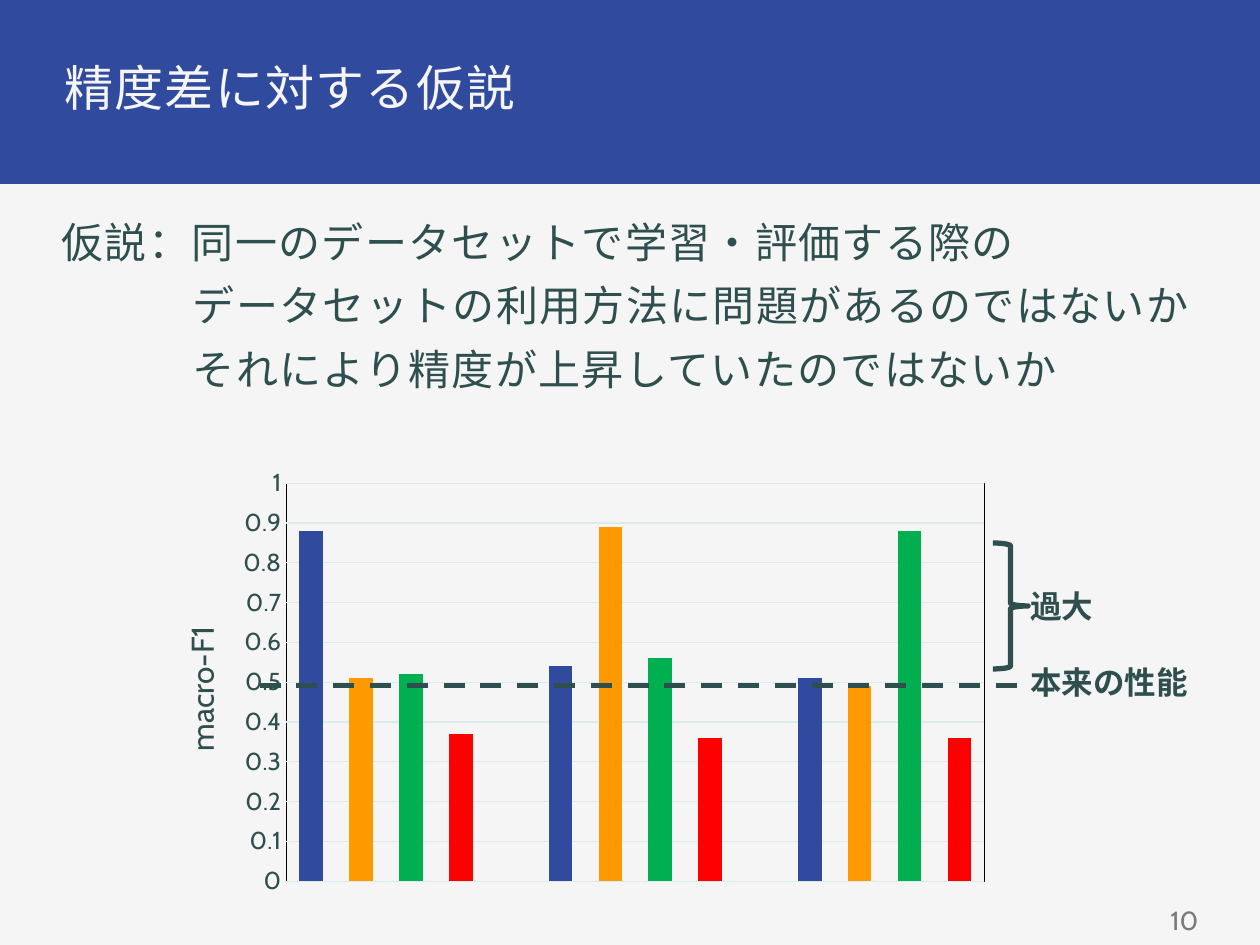
from lxml.etree import SubElement
from pptx import Presentation
from pptx.chart.data import CategoryChartData
from pptx.dml.color import RGBColor
from pptx.enum.chart import XL_CHART_TYPE, XL_TICK_MARK
from pptx.enum.dml import MSO_LINE
from pptx.enum.shapes import MSO_CONNECTOR, MSO_SHAPE
from pptx.enum.text import MSO_ANCHOR, PP_ALIGN
from pptx.oxml import parse_xml
from pptx.oxml.ns import nsdecls, qn
from pptx.util import Emu, Inches, Pt

COLORS = {
    "paper": "F5F5F5", "ink": "2F4F4F", "grid": "DBEAEA", "frame": "000000", "page": "7A7A7A",
    "blue": "304A9E", "orange": "FF9900", "green": "00B050", "red": "FF0000",
}
COLUMNS, ROWS = 100, 75
GROUP_COLORS = ["blue", "orange", "green", "red"]
SCORE_GROUPS = [
    [0.88, 0.51, 0.52, 0.37],
    [0.54, 0.89, 0.56, 0.36],
    [0.51, 0.49, 0.88, 0.36],
]


def rgb(name):
    return RGBColor.from_string(COLORS[name])


class SlideWriter:
    """Draws on one slide; lengths are columns and rows of the grid."""

    font_name = "Cabin"

    def __init__(self, presentation):
        self.column = presentation.slide_width / COLUMNS
        self.row = presentation.slide_height / ROWS
        self.slide = presentation.slides.add_slide(presentation.slide_layouts[6])
        background = self.slide.background.fill
        background.solid()
        background.fore_color.rgb = rgb("paper")

    def area(self, left, top, width, height):
        return [Emu(round(length * unit)) for length, unit in
                zip((left, top, width, height), (self.column, self.row) * 2)]

    def style_font(self, font, size, color, bold=False):
        font.name, font.size, font.bold = self.font_name, Pt(size), bold
        font.color.rgb = rgb(color)

    def text(self, place, lines, size, color="ink", bold=False, align=PP_ALIGN.LEFT,
             anchor=MSO_ANCHOR.TOP, insets=(0.06, 0.06, 0, 0.06), line_spacing=1,
             space_before=0, tracking=0, hanging=0):
        """Writes one paragraph per line; hanging indents all lines but the first."""
        frame = self.slide.shapes.add_textbox(*self.area(*place)).text_frame
        frame.word_wrap = True
        frame.vertical_anchor = anchor
        (frame.margin_left, frame.margin_top,
         frame.margin_right, frame.margin_bottom) = map(Inches, insets)
        for number, line in enumerate(lines):
            paragraph = frame.add_paragraph() if number else frame.paragraphs[0]
            paragraph.text = line
            paragraph.alignment = align
            paragraph.line_spacing = line_spacing
            paragraph.space_before = Pt(space_before)
            self.style_font(paragraph.font, size, color, bold)
            properties = paragraph.font._element
            properties.set("spc", str(round(tracking * 100)))
            SubElement(properties, qn("a:ea"), typeface=self.font_name)
            if number and hanging:
                paragraph._p.get_or_add_pPr().set("marL", str(round(hanging * self.column)))

    def band(self, place, color):
        band = self.slide.shapes.add_shape(MSO_SHAPE.RECTANGLE, *self.area(*place))
        band.shadow.inherit = False
        band.fill.solid()
        band.fill.fore_color.rgb = rgb(color)
        band.line.fill.background()

    def brace(self, place):
        brace = self.slide.shapes.add_shape(MSO_SHAPE.RIGHT_BRACE, *self.area(*place))
        brace.shadow.inherit = False
        brace.fill.background()
        brace.line.color.rgb = rgb("ink")
        brace.line.width = Pt(3)

    def dashed_level(self, left, right, height):
        level = self.slide.shapes.add_connector(
            MSO_CONNECTOR.STRAIGHT, *self.area(left, height, right, height))
        level.line.color.rgb = rgb("ink")
        level.line.width = Pt(3)
        level.line.dash_style = MSO_LINE.DASH
        SubElement(level._element.spPr, qn("a:effectLst"))

    @staticmethod
    def chart_layout(inner=False, **shares):
        """Manual layout in shares of the chart's size."""
        target = '<c:layoutTarget val="inner"/>' if inner else ""
        modes = '<c:xMode val="edge"/><c:yMode val="edge"/>'
        sizes = "".join(f'<c:{key} val="{share}"/>' for key, share in shares.items())
        return parse_xml(f'<c:layout {nsdecls("c")}><c:manualLayout>{target}{modes}{sizes}'
                         "</c:manualLayout></c:layout>")

    def score_chart(self, place, groups):
        scores, bar_colors = [], []
        for group in groups:
            if scores:
                scores.append(None)
                bar_colors.append(None)
            scores += group
            bar_colors += GROUP_COLORS
        data = CategoryChartData()
        data.categories = [str(number + 1) for number in range(len(scores))]
        data.add_series("Series 1", scores)
        chart = self.slide.shapes.add_chart(
            XL_CHART_TYPE.COLUMN_CLUSTERED, *self.area(*place), data).chart
        chart.has_legend = chart.has_title = False
        self.style_font(chart.font, 10, "ink")

        plot = chart.plots[0]
        plot.vary_by_categories = False
        plot.gap_width, plot.overlap = 112, -27
        for number, color in enumerate(bar_colors):
            if color:
                fill = plot.series[0].points[number].format.fill
                fill.solid()
                fill.fore_color.rgb = rgb(color)

        chart.category_axis.visible = False
        axis = chart.value_axis
        axis.minimum_scale, axis.maximum_scale, axis.major_unit = 0, 1, 0.1
        axis.major_tick_mark = XL_TICK_MARK.NONE
        axis.format.line.fill.background()
        axis.major_gridlines.format.line.color.rgb = rgb("grid")
        axis.major_gridlines.format.line.width = Pt(0.75)
        axis.tick_labels.number_format = "General"
        axis.tick_labels.number_format_is_linked = False
        self.style_font(axis.tick_labels.font, 14, "ink")
        caption = axis.axis_title.text_frame
        caption.text = "macro-F1"
        self.style_font(caption.paragraphs[0].font, 18, "ink")
        title = axis.axis_title._element
        for old_layout in title.findall(qn("c:layout")):
            title.remove(old_layout)
        title.find(qn("c:tx")).addnext(self.chart_layout(x=0.04, y=0.36))

        plot_area = chart._chartSpace.chart.plotArea
        for old_layout in plot_area.findall(qn("c:layout")):
            plot_area.remove(old_layout)
        plot_area.insert(0, self.chart_layout(inner=True, x=0.17, y=0.05, w=0.81, h=0.9))
        plot_area.append(parse_xml(
            f'<c:spPr {nsdecls("c", "a")}><a:noFill/><a:ln w="{Pt(0.75)}"><a:solidFill>'
            f'<a:srgbClr val="{COLORS["frame"]}"/></a:solidFill></a:ln></c:spPr>'))


def main():
    presentation = Presentation()
    presentation.slide_width, presentation.slide_height = Inches(10), Inches(7.5)
    writer = SlideWriter(presentation)

    writer.band((0, 0, COLUMNS, 14.6), "blue")
    writer.text((4.3, 4.3, 91.3, 5.9), ["精度差に対する仮説"], 28, "paper",
                insets=(0.08, 0.08, 0.08, 0.06), line_spacing=0.9, tracking=0.8)
    writer.text((4.3, 17, 91.3, 15.9), [
        "仮説：同一のデータセットで学習・評価する際の",
        "データセットの利用方法に問題があるのではないか",
        "それにより精度が上昇していたのではないか",
    ], 24, line_spacing=0.9, space_before=10.5, tracking=0.8, hanging=10.4)

    writer.score_chart((11.1, 36.6, 68.4, 35.1), SCORE_GROUPS)
    writer.dashed_level(20.6, 80.8, 54.4)
    writer.brace((78.8, 43.1, 2.8, 10))
    for top, label in [(52.1, "本来の性能"), (46.1, "過大")]:
        writer.text((80.8, top, 14.8, 4), [label], 18, bold=True,
                    insets=(0.1, 0.05, 0, 0.05))

    writer.text((73.2, 71.1, 22.5, 3.9), ["10"], 15, "page", align=PP_ALIGN.RIGHT,
                anchor=MSO_ANCHOR.MIDDLE, insets=(0.06,) * 4)
    presentation.save("out.pptx")


if __name__ == "__main__":
    main()
